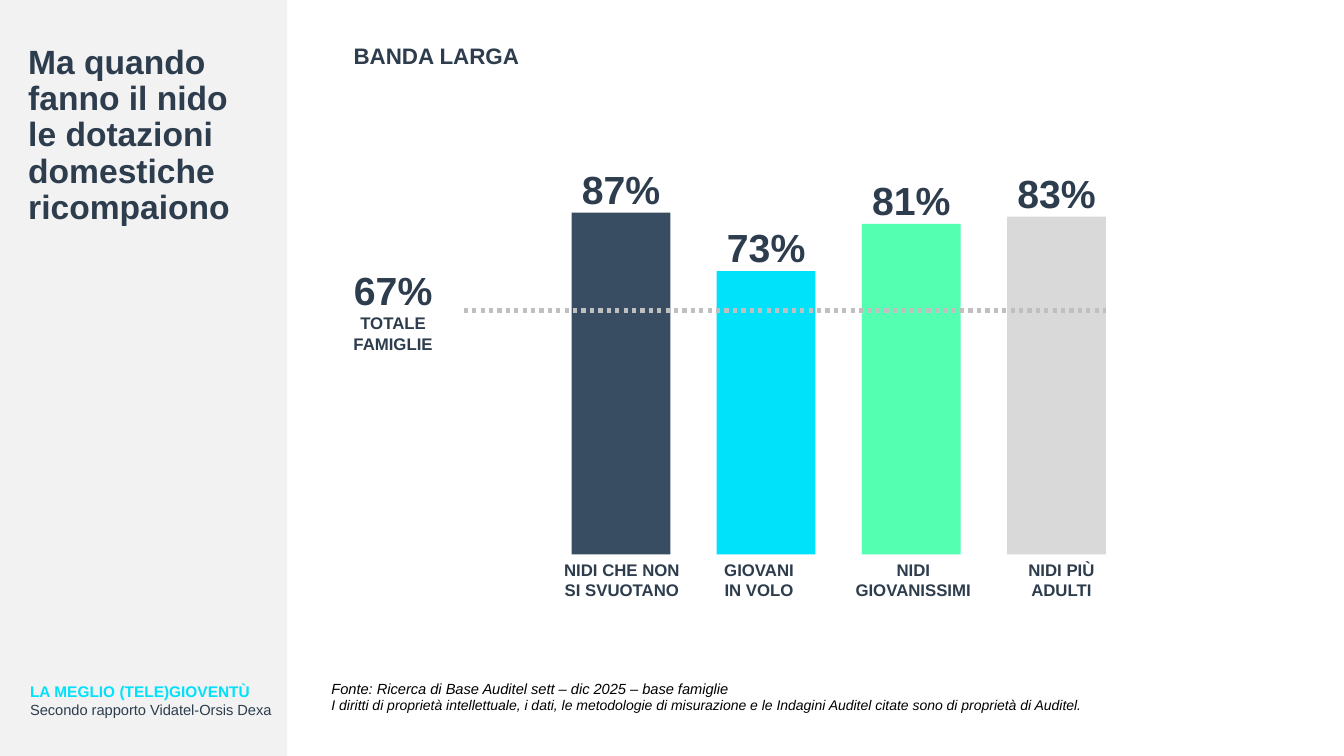
"""Builds the slide on broadband in Italian homes, with a bar for each household type."""
from pptx import Presentation
from pptx.dml.color import RGBColor
from pptx.enum.dml import MSO_LINE
from pptx.enum.shapes import MSO_CONNECTOR, MSO_SHAPE
from pptx.enum.text import MSO_ANCHOR, MSO_AUTO_SIZE, PP_ALIGN
from pptx.oxml.xmlchemy import OxmlElement
from pptx.util import Inches, Pt

COLUMNS, ROWS = 133.33, 75
FONT = "Arial"
TITLE_INK, INK, CYAN = "2D3D4E", "2D3D4D", "00E1FA"
FIRST_BAR, BAR_PITCH, BAR_WIDTH, BASELINE = 56.7, 14.4, 9.8, 55
VALUE_WIDTH, VALUE_HEIGHT, LABEL_HEIGHT = 7.9, 4.7, 5
AVERAGE_ROW = 30.8

# value, bar height, colour, label, label width, label shift from the bar's centre
BARS = [
    ("87%", 33.9, "384D62", "NIDI CHE NON SI SVUOTANO", 14.2, 0.1),
    ("73%", 28.1, CYAN, "GIOVANI IN VOLO", 9.8, -0.7),
    ("81%", 32.8, "55FFB2", "NIDI GIOVANISSIMI", 14.9, 0.2),
    ("83%", 33.5, "D9D9D9", "NIDI PIÙ ADULTI", 11.9, 0.5),
]


def grid(*lengths):
    """Turn grid columns or rows, a tenth of an inch each, into slide lengths."""
    return [Inches(length / 10) for length in lengths]


def colour(value):
    """Return the colour for a hex string."""
    return RGBColor.from_string(value)


def write(paragraph, text, size, ink=INK, bold=False, italic=False, align=PP_ALIGN.LEFT):
    """Write formatted text into a paragraph."""
    paragraph.text = text
    paragraph.alignment = align
    for run in paragraph.runs:
        font = run.font
        font.name, font.size, font.bold, font.italic = FONT, Pt(size), bold, italic
        font.color.rgb = colour(ink)


def add_text(slide, place, *lines, inset=True, wrap=True):
    """Add a text box with one paragraph for each (text, format) pair."""
    frame = slide.shapes.add_textbox(*grid(*place)).text_frame
    frame.word_wrap = wrap
    if not inset:
        frame.margin_left = frame.margin_right = frame.margin_top = frame.margin_bottom = 0
    for index, (text, style) in enumerate(lines):
        paragraph = frame.add_paragraph() if index else frame.paragraphs[0]
        write(paragraph, text, **style)


def add_block(slide, place, fill):
    """Add a plain filled rectangle."""
    block = slide.shapes.add_shape(MSO_SHAPE.RECTANGLE, *grid(*place))
    block.shadow.inherit = False
    block.fill.solid()
    block.fill.fore_color.rgb = colour(fill)
    block.line.fill.background()
    return block


def add_title(slide, text):
    """Place the title over a grey side panel."""
    title = slide.shapes.title
    title.left, title.top, title.width, title.height = grid(1.8, 4, 26, 33.5)
    frame = title.text_frame
    frame.word_wrap, frame.auto_size = True, MSO_AUTO_SIZE.NONE
    frame.vertical_anchor = MSO_ANCHOR.TOP
    write(frame.paragraphs[0], text, size=24, ink=TITLE_INK, bold=True)
    frame.paragraphs[0].line_spacing = 0.9
    panel = add_block(slide, (0, 0, 28.5, ROWS), "F2F2F2")
    title.element.addprevious(panel.element)


def add_bar(slide, index, value, height, fill, label, label_width, shift):
    """Add a bar with its value above and its label below."""
    left = FIRST_BAR + index * BAR_PITCH
    centre = left + BAR_WIDTH / 2
    top = BASELINE - height
    centred = dict(bold=True, align=PP_ALIGN.CENTER)
    add_block(slide, (left, top, BAR_WIDTH, height), fill)
    add_text(slide, (centre - VALUE_WIDTH / 2, top - VALUE_HEIGHT, VALUE_WIDTH, VALUE_HEIGHT),
             (value, dict(size=28, **centred)), inset=False, wrap=False)
    add_text(slide, (centre + shift - label_width / 2, BASELINE, label_width, LABEL_HEIGHT),
             (label, dict(size=12, **centred)))


def add_average(slide):
    """Add the figure for all families and its dotted line."""
    centred = dict(bold=True, align=PP_ALIGN.CENTER)
    add_text(slide, (32.6, AVERAGE_ROW - 4.4, 12.8, 8.8),
             ("67%", dict(size=28, **centred)),
             ("TOTALE\vFAMIGLIE", dict(size=12, **centred)), inset=False)
    right = FIRST_BAR + (len(BARS) - 1) * BAR_PITCH + BAR_WIDTH
    line = slide.shapes.add_connector(
        MSO_CONNECTOR.STRAIGHT, *grid(46, AVERAGE_ROW, right, AVERAGE_ROW))
    line.line.color.rgb = colour("BFBFBF")
    line.line.width = Pt(3)
    line.line.dash_style = MSO_LINE.ROUND_DOT
    line.element.spPr.append(OxmlElement("a:effectLst"))


def main():
    """Build and save the slide."""
    presentation = Presentation()
    presentation.slide_width, presentation.slide_height = grid(COLUMNS, ROWS)
    slide = presentation.slides.add_slide(presentation.slide_layouts[5])
    add_title(slide, "Ma quando fanno il nido \vle dotazioni domestiche ricompaiono")
    add_text(slide, (2, 67.2, 57.8, 4.6),
             ("LA MEGLIO (TELE)GIOVENTÙ", dict(size=11, ink=CYAN, bold=True)),
             ("Secondo rapporto Vidatel-Orsis Dexa", dict(size=10.5, ink=TITLE_INK)))
    add_text(slide, (31.9, 66.9, 79, 6.2),
             ("Fonte: Ricerca di Base Auditel sett – dic 2025 – base famiglie",
              dict(size=10.5, ink="000000", italic=True)),
             ("I diritti di proprietà intellettuale, i dati, le metodologie di misurazione "
              "e le Indagini Auditel citate sono di proprietà di Auditel.",
              dict(size=10, ink="000000", italic=True)))
    add_text(slide, (34.1, 3.7, 50.9, 3.7), ("BANDA LARGA", dict(size=16, bold=True)))
    for index, bar in enumerate(BARS):
        add_bar(slide, index, *bar)
    add_average(slide)
    presentation.save("out.pptx")


if __name__ == "__main__":
    main()
